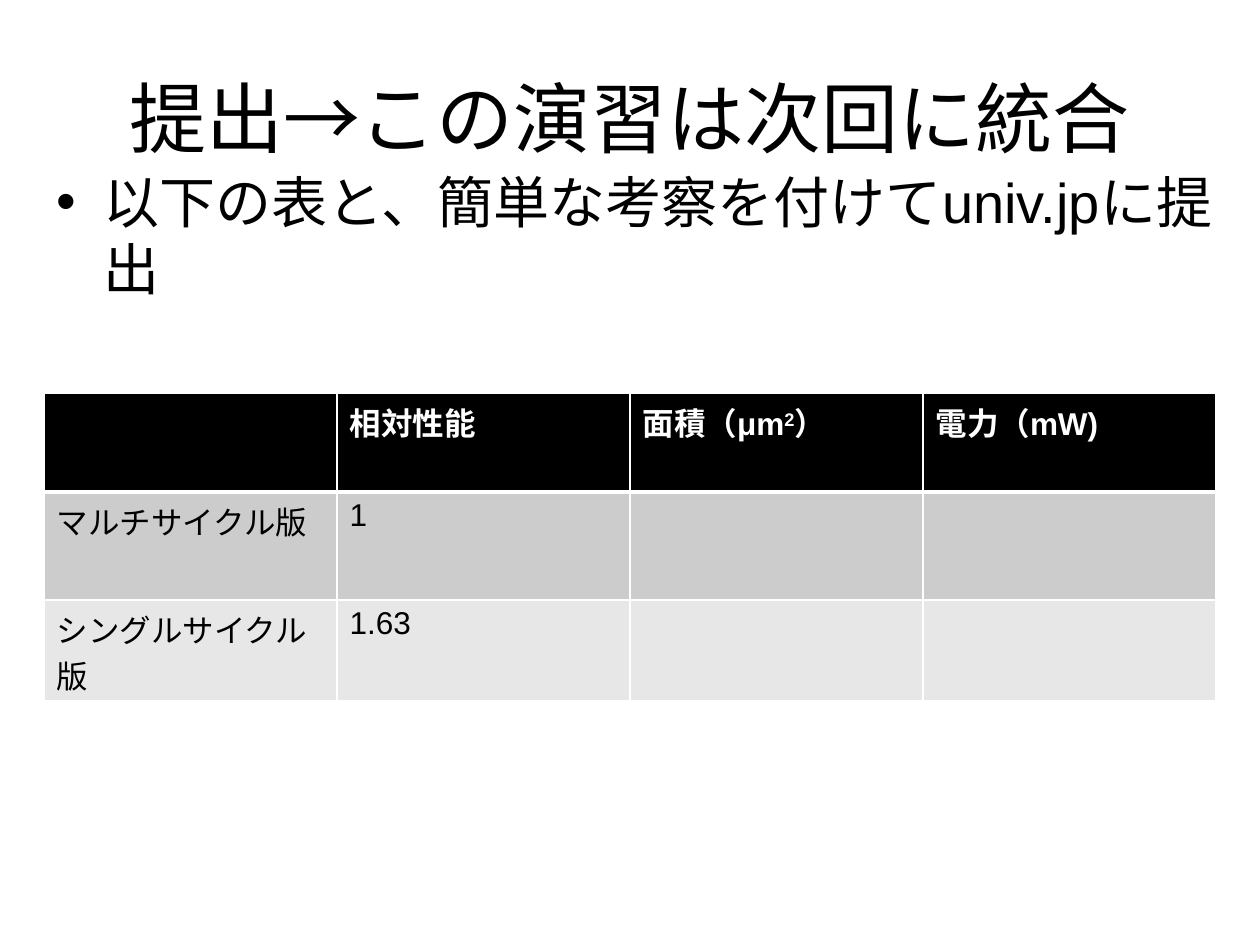
import pptx
import pptx.util
import pptx.dml.color
import pptx.enum.text
import pptx.oxml
import pptx.oxml.ns
from dataclasses import dataclass

TITLE = "提出→この演習は次回に統合"
BULLET = "以下の表と、簡単な考察を付けてuniv.jpに提出"
SUPERSCRIPT = "2"
ROWS = [
    [[], ["相対性能"], ["面積（μm", SUPERSCRIPT, "）"], ["電力（mW)"]],
    [["マルチサイクル版"], ["1"], [], []],
    [["シングルサイクル版"], ["1.63"], [], []],
]

TITLE_AREA = (63, 38, 1134, 157)
BULLET_AREA = (44, 161, 1186, 193)
TABLE_LEFT, TABLE_TOP = 44, 393
COLUMN_WIDTH = 293
ROW_HEIGHTS = [99, 108, 101]
BULLET_INDENT = 47
PX = 914400 / 126


@dataclass(frozen=True)
class Theme:
    font: str = "Arial"
    ink: str = "000000"
    paper: str = "FFFFFF"
    row_fills: tuple = ("000000", "CCCCCC", "E7E7E7")
    title_size: int = 44
    bullet_size: int = 32
    cell_size: int = 18
    thin: int = 1
    thick: int = 3


THEME = Theme()


def emu(px):
    return pptx.util.Emu(round(px * PX))


def rgb(code):
    return pptx.dml.color.RGBColor.from_string(code)


def style(span, size, color, bold=False):
    span.font.name = THEME.font
    span.font.size = pptx.util.Pt(size)
    span.font.bold = bold
    span.font.color.rgb = rgb(color)


def add_text(page, area, text, size):
    box = page.shapes.add_textbox(*map(emu, area))
    box.text_frame.word_wrap = True
    para = box.text_frame.paragraphs[0]
    para.text = text
    style(para.runs[0], size, THEME.ink)
    return box.text_frame, para


def add_bullet(para):
    properties = para._p.get_or_add_pPr()
    properties.set("marL", str(emu(BULLET_INDENT)))
    properties.set("indent", str(-emu(BULLET_INDENT)))
    namespace = pptx.oxml.ns.nsdecls("a")
    for markup in (
        f'<a:spcBef {namespace}><a:spcPct val="20000"/></a:spcBef>',
        f'<a:buFont {namespace} typeface="{THEME.font}"/>',
        f'<a:buChar {namespace} char="•"/>',
    ):
        properties.append(pptx.oxml.parse_xml(markup))


def set_borders(cell, row):
    widths = {
        "lnL": THEME.thin,
        "lnR": THEME.thin,
        "lnT": THEME.thick if row == 1 else THEME.thin,
        "lnB": THEME.thick if row == 0 else THEME.thin,
    }
    properties = cell._tc.get_or_add_tcPr()
    for side, width in widths.items():
        properties.append(pptx.oxml.parse_xml(
            f'<a:{side} {pptx.oxml.ns.nsdecls("a")} w="{pptx.util.Pt(width)}">'
            f'<a:solidFill><a:srgbClr val="{THEME.paper}"/></a:solidFill></a:{side}>'))


def fill_cell(cell, parts, row):
    set_borders(cell, row)
    cell.fill.solid()
    cell.fill.fore_color.rgb = rgb(THEME.row_fills[row])
    header = row == 0
    para = cell.text_frame.paragraphs[0]
    for part in parts:
        span = para.add_run()
        span.text = part
        style(span, THEME.cell_size, THEME.paper if header else THEME.ink, header)
        if part == SUPERSCRIPT:
            span._r.get_or_add_rPr().set("baseline", "30000")


def add_results(page):
    columns = len(ROWS[0])
    frame = page.shapes.add_table(
        len(ROWS), columns, emu(TABLE_LEFT), emu(TABLE_TOP),
        emu(COLUMN_WIDTH * columns), emu(sum(ROW_HEIGHTS)))
    table = frame.table
    for column in table.columns:
        column.width = emu(COLUMN_WIDTH)
    for row, (height, cells) in enumerate(zip(ROW_HEIGHTS, ROWS)):
        table.rows[row].height = emu(height)
        for column, parts in enumerate(cells):
            fill_cell(table.cell(row, column), parts, row)


def main():
    deck = pptx.Presentation()
    deck.slide_width, deck.slide_height = emu(1260), emu(945)
    page = deck.slides.add_slide(deck.slide_layouts[6])

    frame, para = add_text(page, TITLE_AREA, TITLE, THEME.title_size)
    frame.vertical_anchor = pptx.enum.text.MSO_ANCHOR.MIDDLE
    para.alignment = pptx.enum.text.PP_ALIGN.CENTER

    frame, para = add_text(page, BULLET_AREA, BULLET, THEME.bullet_size)
    add_bullet(para)

    add_results(page)
    deck.save("out.pptx")


if __name__ == "__main__":
    main()
